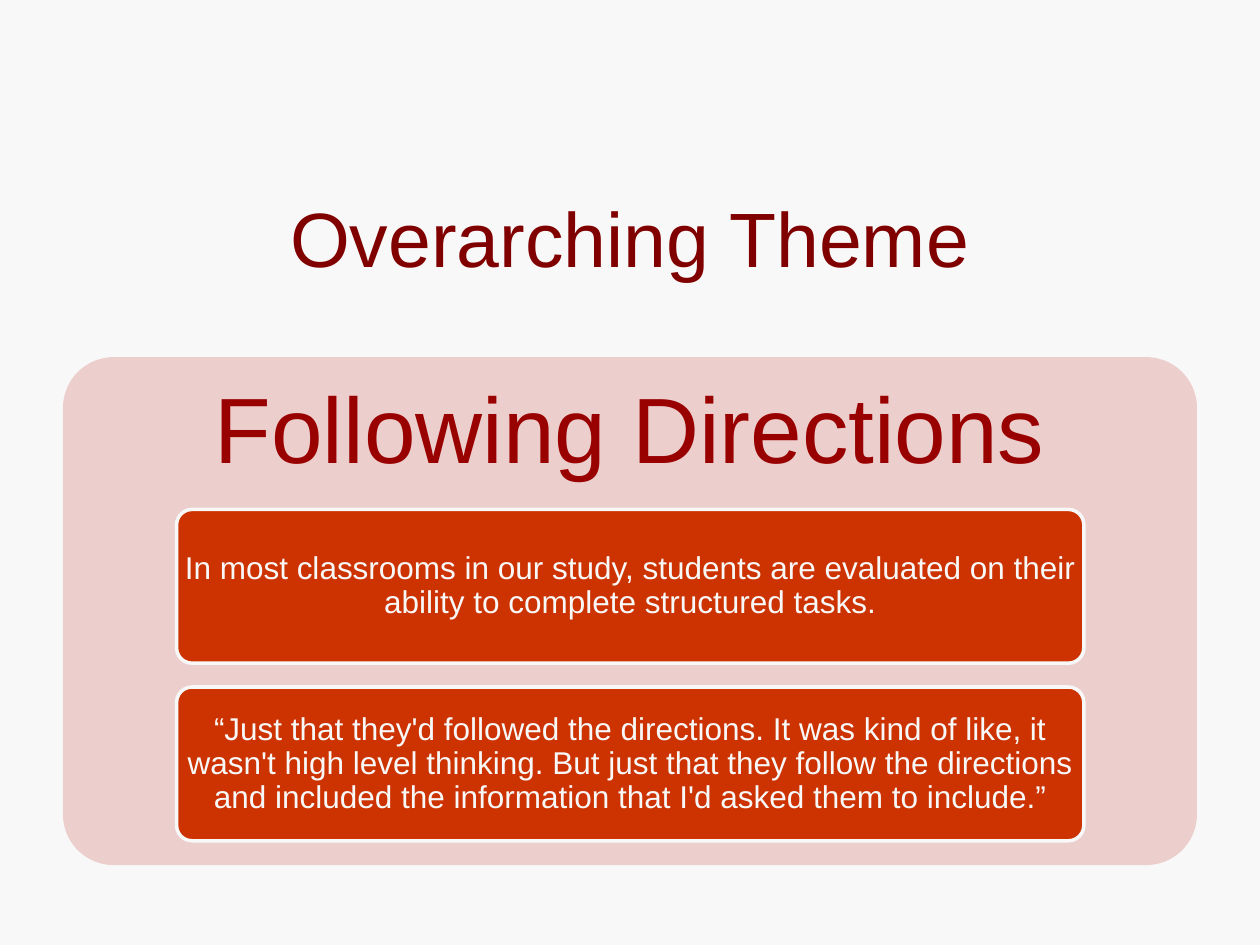
from typing import NamedTuple

from pptx import Presentation
from pptx.dml.color import RGBColor
from pptx.enum.shapes import MSO_SHAPE
from pptx.enum.text import MSO_ANCHOR, PP_ALIGN
from pptx.util import Cm, Pt

PAPER = "F8F8F8"
MAROON = "800000"
CRIMSON = "990000"
BLUSH = "ECCECC"
BRICK = "CC3300"


class Area(NamedTuple):
    """Left, top, width and height in centimetres."""
    left: float
    top: float
    width: float
    height: float

    def lengths(self) -> list[Cm]:
        return [Cm(value) for value in self]


TITLE = Area(1.27, 3.18, 22.86, 3.18)
PANEL = Area(1.27, 7.2, 22.86, 10.24)
HEADING = PANEL._replace(height=3.07)
FIRST_CARD = Area(3.56, 10.27, 18.29, 3.1)
CARD_STEP = 3.58

CARD_TEXTS = [
    "In most classrooms in our study, students are evaluated on their "
    "ability to complete structured tasks.",
    "“Just that they'd followed the directions. It was kind of like, it "
    "wasn't high level thinking. But just that they follow the directions "
    "and included the information that I'd asked them to include.”",
]


def color(value: str) -> RGBColor:
    return RGBColor.from_string(value)


def write(box, text: str, *, size: float, ink: str, spacing: float = 0.9,
          inset: tuple[float, float] = (0.25, 0.13)) -> None:
    """Fill a box with one centred paragraph; inset is (side, top and bottom) in cm."""
    frame = box.text_frame
    frame.word_wrap = True
    frame.vertical_anchor = MSO_ANCHOR.MIDDLE
    frame.margin_left = frame.margin_right = Cm(inset[0])
    frame.margin_top = frame.margin_bottom = Cm(inset[1])
    para = frame.paragraphs[0]
    para.alignment = PP_ALIGN.CENTER
    para.line_spacing = spacing
    span = para.add_run()
    span.text = text
    span.font.name = "Arial"
    span.font.size = Pt(size)
    span.font.color.rgb = color(ink)


def add_rounded(page, area: Area, fill: str, line: str | None = None):
    box = page.shapes.add_shape(MSO_SHAPE.ROUNDED_RECTANGLE, *area.lengths())
    box.adjustments[0] = 0.1
    box.shadow.inherit = False
    box.fill.solid()
    box.fill.fore_color.rgb = color(fill)
    if line:
        box.line.color.rgb = color(line)
        box.line.width = Pt(2)
    else:
        box.line.fill.background()
    return box


def main() -> None:
    deck = Presentation()
    deck.slide_width, deck.slide_height = Cm(25.4), Cm(19.05)
    page = deck.slides.add_slide(deck.slide_layouts[5])
    page.background.fill.solid()
    page.background.fill.fore_color.rgb = color(PAPER)

    title = page.shapes.title
    title.left, title.top, title.width, title.height = TITLE.lengths()
    write(title, "Overarching Theme", size=44, ink=MAROON, spacing=1.0)

    add_rounded(page, PANEL, BLUSH)
    heading = page.shapes.add_textbox(*HEADING.lengths())
    write(heading, "Following Directions", size=53, ink=CRIMSON, inset=(0.56, 0.56))

    for index, text in enumerate(CARD_TEXTS):
        area = FIRST_CARD._replace(top=FIRST_CARD.top + index * CARD_STEP)
        card = add_rounded(page, area, BRICK, line=PAPER)
        write(card, text, size=18, ink=PAPER, inset=(0.03, 0.03))

    deck.save("out.pptx")


if __name__ == "__main__":
    main()
